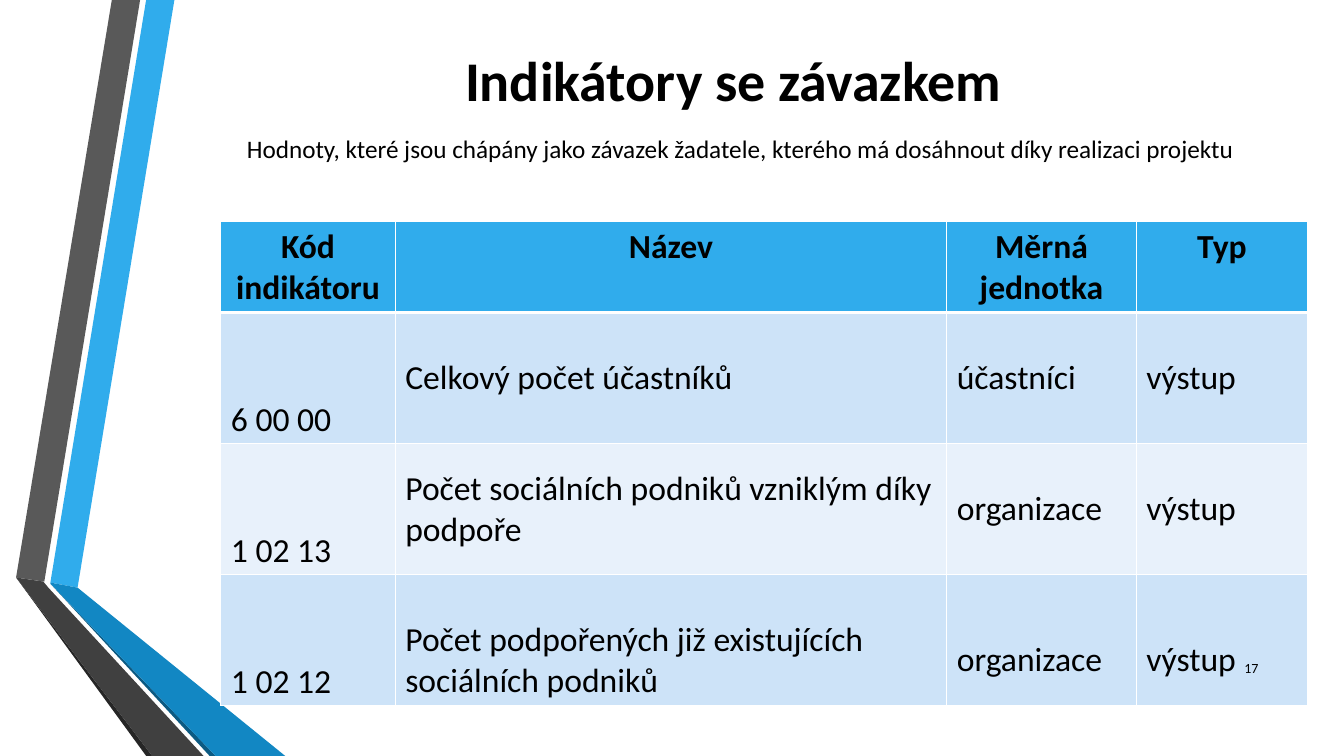
from lxml.etree import SubElement
from pptx import Presentation
from pptx.dml.color import RGBColor
from pptx.enum.text import MSO_ANCHOR as Anchor, PP_ALIGN as Align
from pptx.oxml.ns import qn
from pptx.util import Inches, Pt

FONT = "Calibri"
RIBBONS = [
    ("30ACEC", [(0.5, 5.78), (0.77, 5.83), (1.73, 0), (1.45, 0)]),
    ("595959", [(1.39, 0), (1.11, 0), (0.16, 5.73), (0.44, 5.77)]),
    ("262626", [(0.16, 5.73), (1.45, 7.5), (1.51, 7.5)]),
    ("0C5A82", [(0.5, 5.79), (2.08, 7.5), (2.14, 7.5)]),
    ("1287C3", [(0.5, 5.79), (2.14, 7.5), (2.83, 7.5), (0.77, 5.83), (0.5, 5.78)]),
    ("404040", [(2.02, 7.5), (0.48, 5.83), (0.43, 5.77), (0.16, 5.73), (1.51, 7.5)]),
]
COLUMN_WIDTHS = [1.73, 5.47, 1.88, 1.7]
HEADER_HEIGHT, ROW_HEIGHT = 0.9, 1.3
HEADER_FILL = "30ACEC"
BAND_FILLS = ["CDE3F8", "E8F1FB"]
HEADINGS = ["Kód indikátoru", "Název", "Měrná jednotka", "Typ"]
INDICATORS = [
    ["6 00 00", "Celkový počet účastníků", "účastníci", "výstup"],
    ["1 02 13", "Počet sociálních podniků vzniklým díky podpoře", "organizace", "výstup"],
    ["1 02 12", "Počet podpořených již existujících sociálních podniků", "organizace", "výstup"],
]


def color(code):
    """Turn a hex string into a colour."""
    return RGBColor.from_string(code)


def write(frame, text, size, bold=False, align=Align.LEFT):
    """Write one black paragraph into a text frame."""
    frame.word_wrap = True
    line = frame.paragraphs[0]
    line.text = text
    line.alignment = align
    line.font.name, line.font.size, line.font.bold = FONT, Pt(size), bold
    line.font.color.rgb = color("000000")
    return line


def add_ribbons(slide, left, top):
    """Draw the two folded ribbons from the given corner."""
    for fill, points in RIBBONS:
        corners = [(Inches(left + x), Inches(top + y)) for x, y in points]
        outline = slide.shapes.build_freeform(*corners[0])
        outline.add_line_segments(corners[1:], close=True)
        ribbon = outline.convert_to_shape()
        ribbon.shadow.inherit = False
        ribbon.fill.solid()
        ribbon.fill.fore_color.rgb = color(fill)
        ribbon.line.fill.background()


def add_label(slide, left, top, width, height, text, size, anchor=Anchor.TOP, **style):
    """Place a text box in the given box."""
    label = slide.shapes.add_textbox(*map(Inches, (left, top, width, height)))
    label.text_frame.vertical_anchor = anchor
    write(label.text_frame, text, size, **style)


def set_borders(cell, top, bottom):
    """Give a cell white borders with the given top and bottom widths."""
    properties = cell._tc.get_or_add_tcPr()
    for side, width in (("L", 1), ("R", 1), ("T", top), ("B", bottom)):
        border = SubElement(properties, qn(f"a:ln{side}"), w=str(Pt(width)))
        SubElement(SubElement(border, qn("a:solidFill")), qn("a:srgbClr"), val="FFFFFF")


def add_indicators(slide, left, top):
    """Build the indicator table from the given corner."""
    rows = [HEADINGS, *INDICATORS]
    heights = [HEADER_HEIGHT] + [ROW_HEIGHT] * len(INDICATORS)
    box = map(Inches, (left, top, sum(COLUMN_WIDTHS), sum(heights)))
    table = slide.shapes.add_table(len(rows), len(HEADINGS), *box).table
    for column, width in zip(table.columns, COLUMN_WIDTHS):
        column.width = Inches(width)
    for r, (texts, height) in enumerate(zip(rows, heights)):
        table.rows[r].height = Inches(height)
        header = r == 0
        for c, text in enumerate(texts):
            cell = table.cell(r, c)
            set_borders(cell, 3 if r == 1 else 1, 3 if header else 1)
            cell.fill.solid()
            cell.fill.fore_color.rgb = color(HEADER_FILL if header else BAND_FILLS[(r - 1) % 2])
            cell.vertical_anchor = Anchor.TOP if header else Anchor.MIDDLE
            line = write(cell.text_frame, text, 24, header, Align.CENTER if header else Align.LEFT)
            if c == 0 and not header:
                line.line_spacing = 3.0
            elif r == len(INDICATORS):
                cell.margin_top = Inches(0.45)


def main():
    """Build and save the slide."""
    deck = Presentation()
    deck.slide_width, deck.slide_height = Inches(13.33), Inches(7.5)
    slide = deck.slides.add_slide(deck.slide_layouts[6])
    add_ribbons(slide, 0, 0)
    add_label(slide, 3.33, 0.4, 8.01, 0.77, "Indikátory se závazkem ", 40,
              bold=True, align=Align.CENTER)
    add_label(slide, 2.35, 1.27, 10.38, 0.4,
              "Hodnoty, které jsou chápány jako závazek žadatele, "
              "kterého má dosáhnout díky realizaci projektu", 18)
    add_indicators(slide, 2.19, 2.2)
    add_label(slide, 11.98, 6.43, 0.6, 0.4, "17", 10, Anchor.MIDDLE, align=Align.RIGHT)
    deck.save("out.pptx")


if __name__ == "__main__":
    main()
